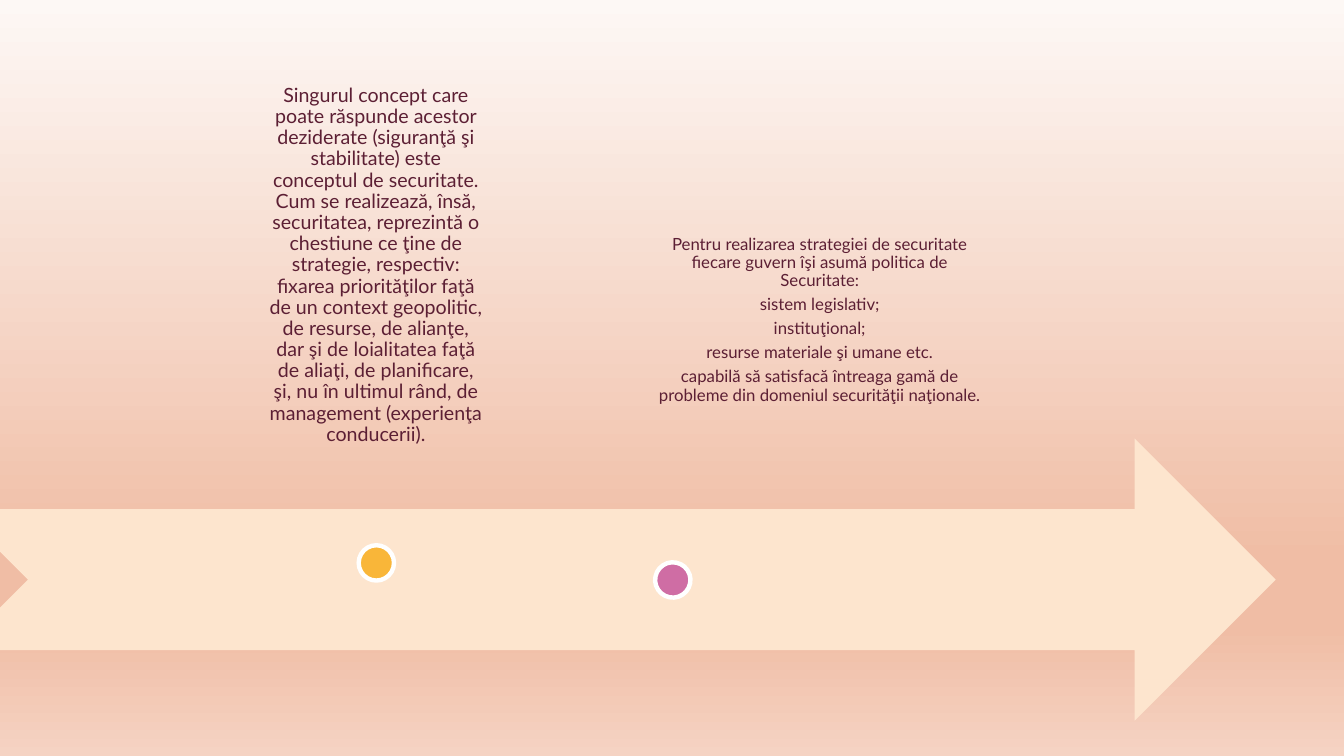
from dataclasses import dataclass

from lxml import etree
from pptx import Presentation
from pptx import util as u
from pptx.dml.color import RGBColor
from pptx.enum import shapes, text
from pptx.oxml.ns import qn

FONT = "Lato"
TEXT_COLOR = "5C1F34"
MARKER_SIZE = 0.89
BACKGROUND_STOPS = [(0, "FDF8F5"), (74, "F0BDA5"), (83, "F0BDA5"), (100, "F5D3C3")]


@dataclass
class Milestone:
    box: tuple[float, float, float, float]  # left, top, width, height in cm
    marker: tuple[float, float]
    marker_color: str
    paragraphs: list[str]
    size: float
    inset: float
    anchor: text.MSO_ANCHOR
    rotation: float = 0


MILESTONES = [
    Milestone(
        (6.45, 6.15, 6.05, 5.36), (9.04, 13.74), "F9B639",
        ["Singurul concept care poate răspunde acestor deziderate (siguranţă şi stabilitate) "
         "este conceptul de securitate. Cum se realizează, însă, securitatea, reprezintă o "
         "chestiune ce ţine de strategie, respectiv: fixarea priorităţilor faţă de un context "
         "geopolitic, de resurse, de alianţe, dar şi de loialitatea faţă de aliaţi, de "
         "planificare, şi, nu în ultimul rând, de management (experienţa conducerii)."],
        14, 0.28, text.MSO_ANCHOR.BOTTOM),
    Milestone(
        (16.28, 5.72, 8.76, 7.11), (16.51, 14.17), "CF6DA4",
        ["Pentru realizarea strategiei de securitate fiecare guvern îşi asumă politica de "
         "Securitate:",
         "sistem legislativ;",
         "instituţional;",
         "resurse materiale şi umane etc.",
         "capabilă să satisfacă întreaga gamă de probleme din domeniul securităţii naţionale."],
        12, 0.23, text.MSO_ANCHOR.TOP, rotation=11.3),
]


def color(value: str) -> RGBColor:
    return RGBColor.from_string(value)


def add_shape(slide, kind, left: float, top: float, width: float, height: float,
              fill: str | None = None):
    shape = slide.shapes.add_shape(kind, u.Cm(left), u.Cm(top), u.Cm(width), u.Cm(height))
    shape.shadow.inherit = False
    shape.line.fill.background()
    if fill:
        shape.fill.solid()
        shape.fill.fore_color.rgb = color(fill)
    return shape


def set_vertical_gradient(shape, stops: list[tuple[int, str]]) -> None:
    shape.fill.gradient()
    gradient = shape._element.spPr.find(qn("a:gradFill"))
    stop_list = gradient.find(qn("a:gsLst"))
    for old_stop in list(stop_list):
        stop_list.remove(old_stop)
    for percent, value in stops:
        stop = etree.SubElement(stop_list, qn("a:gs"), pos=str(percent * 1000))
        etree.SubElement(stop, qn("a:srgbClr"), val=value)
    gradient.find(qn("a:lin")).set("ang", str(90 * 60000))


def add_text(slide, paragraphs: list[str], box: tuple[float, float, float, float], *,
             size: float, inset: float, anchor: text.MSO_ANCHOR) -> None:
    frame = slide.shapes.add_textbox(*map(u.Cm, box)).text_frame
    frame.word_wrap = True
    frame.vertical_anchor = anchor
    frame.margin_left = frame.margin_right = u.Cm(inset)
    frame.margin_top = frame.margin_bottom = u.Cm(inset)
    for index, content in enumerate(paragraphs):
        paragraph = frame.add_paragraph() if index else frame.paragraphs[0]
        paragraph.alignment = text.PP_ALIGN.CENTER
        paragraph.line_spacing = 0.9
        paragraph.space_after = u.Pt(0.35 * size)
        run = paragraph.add_run()
        run.text = content
        run.font.name = FONT
        run.font.size = u.Pt(size)
        run.font.color.rgb = color(TEXT_COLOR)


def add_milestone(slide, milestone: Milestone) -> None:
    add_text(slide, milestone.paragraphs, milestone.box, size=milestone.size,
             inset=milestone.inset, anchor=milestone.anchor)
    marker = add_shape(slide, shapes.MSO_SHAPE.OVAL, *milestone.marker,
                       MARKER_SIZE, MARKER_SIZE, milestone.marker_color)
    marker.line.color.rgb = color("FFFFFF")
    marker.line.width = u.Pt(3.15)
    marker.rotation = milestone.rotation


def main() -> None:
    presentation = Presentation()
    presentation.slide_width = u.Cm(33.87)
    presentation.slide_height = u.Cm(19.05)
    slide = presentation.slides.add_slide(presentation.slide_layouts[6])

    # Backdrop
    backdrop = add_shape(slide, shapes.MSO_SHAPE.RECTANGLE, 0, 0, 33.87, 19.05)
    set_vertical_gradient(backdrop, BACKGROUND_STOPS)

    # Timeline arrow
    add_shape(slide, shapes.MSO_SHAPE.NOTCHED_RIGHT_ARROW, -1.07, 11.05, 33.22, 7.11, "FDE5CE")

    # Texts and their markers
    for milestone in MILESTONES:
        add_milestone(slide, milestone)

    presentation.save("out.pptx")


if __name__ == "__main__":
    main()
